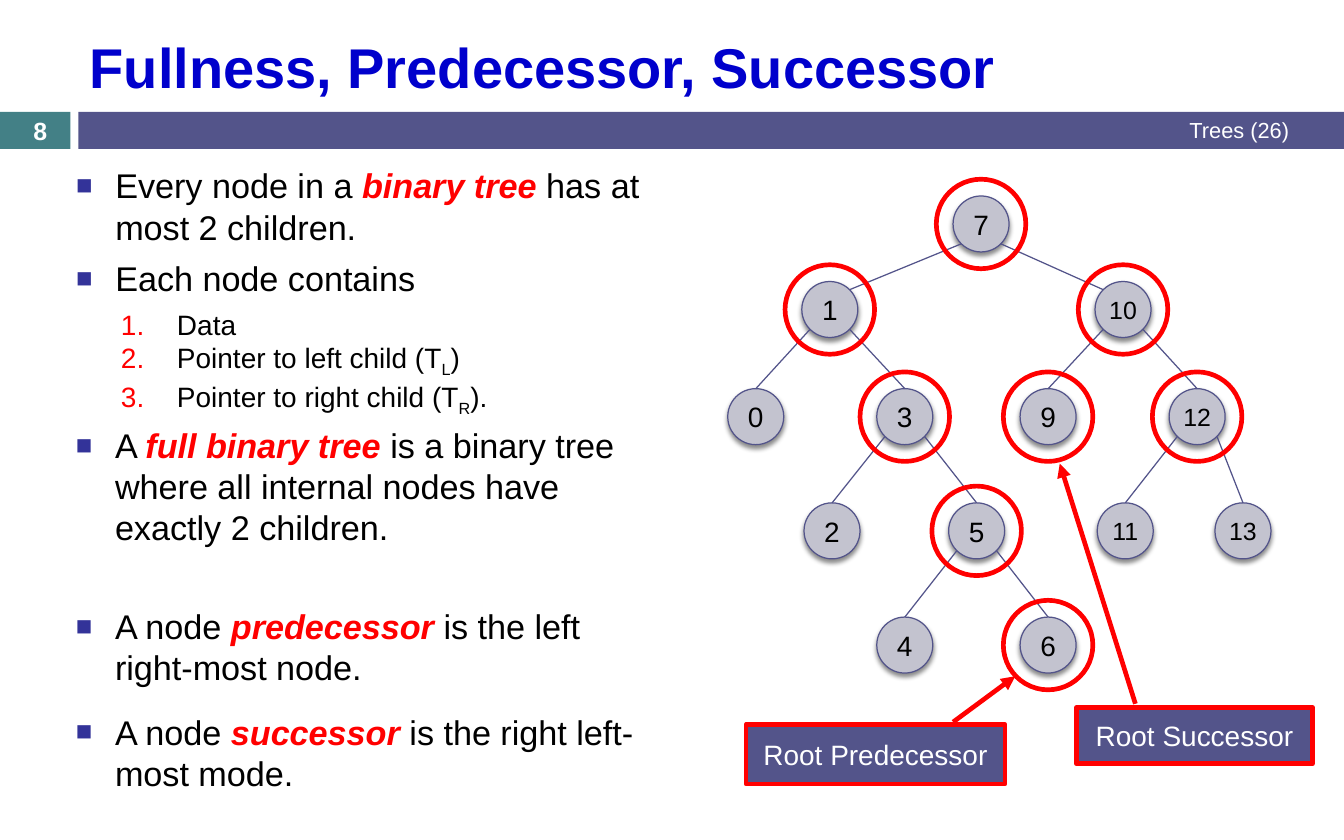
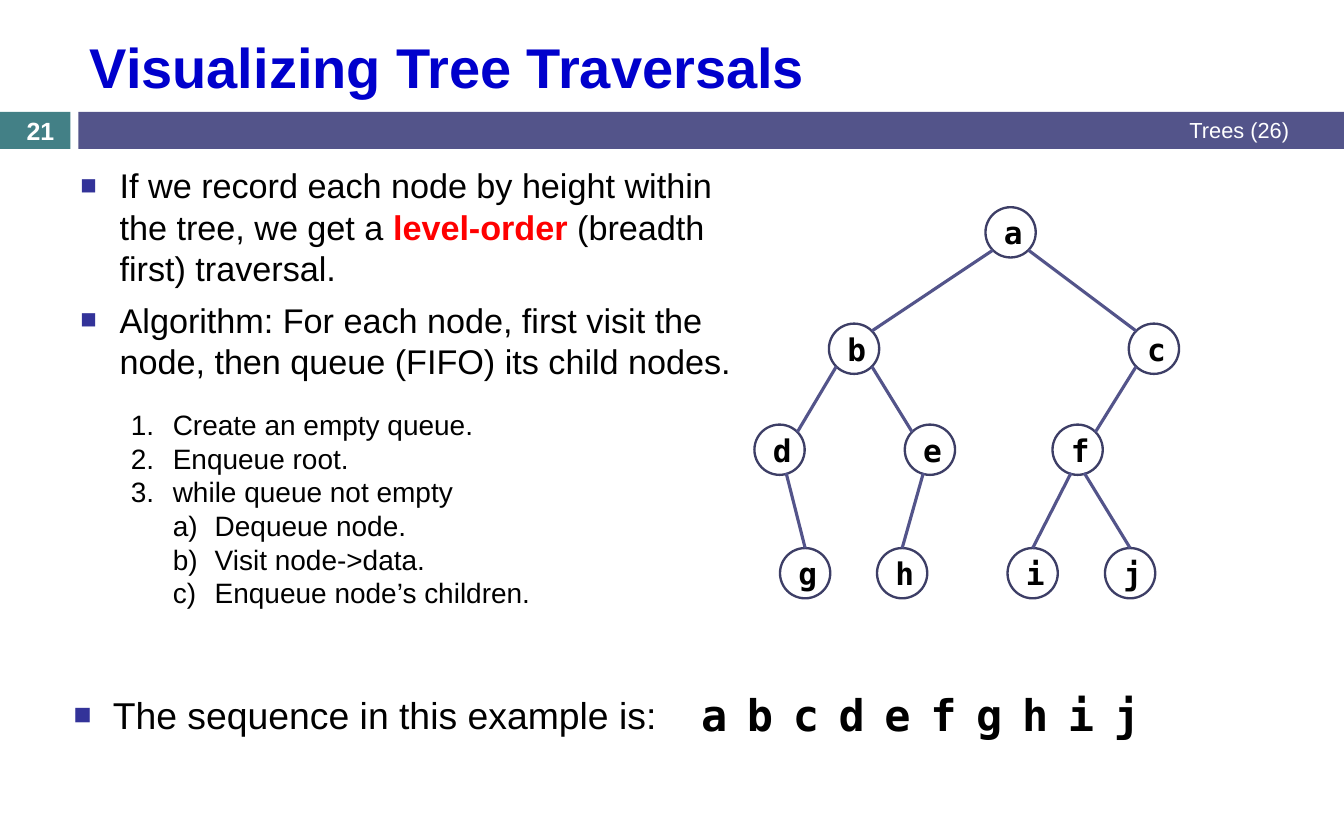
from lxml.etree import SubElement
from pptx import Presentation
from pptx.dml.color import RGBColor
from pptx.enum.shapes import MSO_CONNECTOR as Connector, MSO_SHAPE as Shape
from pptx.enum.text import MSO_ANCHOR as Anchor, MSO_AUTO_SIZE as AutoSize, PP_ALIGN as Align
from pptx.oxml.ns import qn
from pptx.util import Cm, Pt

SANS, MONO = "Arial", "DejaVu Sans Mono"
BLACK, WHITE, RED = "000000", "FFFFFF", "FF0000"
TITLE_BLUE, BULLET_BLUE = "0000CC", "333399"
PURPLE, DARK_PURPLE, TEAL, GREY = "53548A", "3D3E66", "438086", "C3C3CF"

COURSE = "Trees (26)"
CORNER, UNDERSIDE, TOP = (0.71, 0.71), (0.26, 0.92), (0, 1)  # shares of a radius

# Paragraph kinds: size, margin and hanging in cm, space before, numbering (None: square)
KINDS = {
    "point": dict(size=22, margin=0.89, hang=0.89, before=7, color=BULLET_BLUE),
    "big point": dict(size=24, margin=0.89, hang=0.89, before=7, color=BULLET_BLUE),
    "first part": dict(size=18, margin=2.29, hang=1.27, before=5.5, color=RED,
                       number="arabicPeriod", level=1),
    "part": dict(size=18, margin=2.29, hang=1.27, before=0, color=RED,
                 number="arabicPeriod", level=1),
    "step": dict(size=18, margin=0.95, hang=0.95, before=0, color=BLACK,
                 number="arabicPeriod"),
    "substep": dict(size=18, margin=1.9, hang=0.95, before=0, color=BLACK,
                    number="alphaLcParenR", level=1),
}

# Each list: box in cm, then paragraphs as a kind and its runs (text, or style and text)
FULLNESS_LISTS = [
    ((1.47, 3.61, 13.82, 5.69), [
        ("point", ["Every node in a ", ("term", "binary tree "), "has at most 2 children."]),
        ("point", ["Each node contains"]),
        ("first part", ["Data"]),
        ("part", ["Pointer to left child (T", ("sub", "L"), ")"]),
        ("part", ["Pointer to right child (T", ("sub", "R"), ")."]),
    ]),
    ((1.47, 9.5, 13.41, 4.04), [
        ("point", ["A ", ("term", "full binary tree "),
                   "is a binary tree where all internal nodes have exactly 2 children."]),
    ]),
    ((1.47, 13.61, 13.56, 2.62), [
        ("point", ["A node ", ("term", "predecessor"), " is the left right-most node."]),
    ]),
    ((1.47, 16, 13.56, 2.62), [
        ("point", ["A node ", ("term", "successor"), " is the right left-most mode."]),
    ]),
]
TRAVERSAL_LISTS = [
    ((1.57, 3.61, 15.39, 5.59), [
        ("point", ["If we record each node by height within the tree, we get a ",
                   ("strong", "level-order"), " (breadth first) traversal."]),
        ("point", ["Algorithm: For each node, first visit the node, "
                   "then queue (FIFO) its child nodes."]),
    ]),
    ((2.72, 9.12, 12.6, 4.88), [
        ("step", ["Create an empty queue."]),
        ("step", ["Enqueue root."]),
        ("step", ["while queue not empty"]),
        ("substep", ["Dequeue node."]),
        ("substep", ["Visit node->data."]),
        ("substep", ["Enqueue node’s children."]),
    ]),
    ((1.42, 15.57, 13.82, 1.9), [
        ("big point", ["The sequence in this example is:"]),
    ]),
]

# Tree rows: centre height, where edges leave the parent and reach the child,
# then nodes as label, centre and parent
NUMBER_TREE = [
    (5.08, None, None, [("7", 22.25, None)]),
    (7.02, CORNER, CORNER, [("1", 18.82, "7"), ("10", 25.47, "7")]),
    (9.45, CORNER, TOP, [("0", 17.14, "1"), ("3", 20.52, "1"),
                         ("9", 23.77, "10"), ("12", 27.15, "10")]),
    (12.04, CORNER, TOP, [("2", 18.87, "3"), ("5", 22.15, "3"),
                          ("11", 25.52, "12"), ("13", 28.19, "12")]),
    (14.63, CORNER, TOP, [("4", 20.52, "5"), ("6", 23.77, "5")]),
]
LETTER_TREE = [
    (5.27, None, None, [("a", 22.92, None)]),
    (7.91, CORNER, CORNER, [("b", 19.37, "a"), ("c", 26.17, "a")]),
    (10.2, CORNER, CORNER, [("d", 17.68, "b"), ("e", 21.09, "b"), ("f", 24.44, "c")]),
    (13, UNDERSIDE, TOP, [("g", 18.26, "d"), ("h", 20.46, "e"),
                          ("i", 23.42, "f"), ("j", 25.63, "f")]),
]
NUMBER_STYLE = dict(size=1.27, fill=GREY, line=PURPLE, width=0.79, edge_width=0.79,
                    font=SANS, bold=False, inset=0, shadow=True)
LETTER_STYLE = dict(size=1.14, fill=WHITE, line=DARK_PURPLE, width=1.5, edge_width=2,
                    font=MONO, bold=True, inset=0.25, shadow=False)

RINGED, RING_SIZE = ["1", "7", "10", "12", "3", "5", "9", "6"], 2.03
CALLOUTS = [
    ("Root Successor", (24.41, 16.05, 5.36, 1.27), (-0.07, 0.25, -4.36, -0.07)),
    ("Root Predecessor", (16.92, 16.43, 5.87, 1.35), (-0.04, 0.8, -0.81, 1.04)),
]
SEQUENCE, SEQUENCE_LEFT, SEQUENCE_PITCH = "abcdefghij", 15.65, 1.04


def rgb(color):
    return RGBColor.from_string(color)


def place(shape, box):
    shape.left, shape.top, shape.width, shape.height = map(Cm, box)


def set_font(font, size, color=BLACK, name=SANS, bold=False):
    font.size, font.name, font.bold = Pt(size), name, bold
    font.color.rgb = rgb(color)


def write(shape, text, size, align=Align.CENTER, anchor=Anchor.MIDDLE, **font):
    frame = shape.text_frame
    frame.word_wrap, frame.auto_size, frame.vertical_anchor = True, AutoSize.NONE, anchor
    para = frame.paragraphs[0]
    para.text, para.alignment = text, align
    set_font(para.font, size, **font)


def add_text(slide, box, text, size, **style):
    write(slide.shapes.add_textbox(*map(Cm, box)), text, size, **style)


def add_shape(slide, kind, box, fill=None, line=None, width=1):
    shape = slide.shapes.add_shape(kind, *map(Cm, box))
    shape.shadow.inherit = False
    if fill:
        shape.fill.solid()
        shape.fill.fore_color.rgb = rgb(fill)
    else:
        shape.fill.background()
    if line:
        shape.line.color.rgb = rgb(line)
        shape.line.width = Pt(width)
    else:
        shape.line.fill.background()
    return shape


def add_circle(slide, centre, size, **look):
    x, y = centre
    return add_shape(slide, Shape.OVAL, (x - size / 2, y - size / 2, size, size), **look)


def add_soft_shadow(shape):
    effects = shape.element.spPr.find(qn("a:effectLst"))
    shadow = SubElement(effects, qn("a:outerShdw"), blurRad="38100", dist="30000",
                        dir="5400000", rotWithShape="0")
    color = SubElement(shadow, qn("a:srgbClr"), val=BLACK)
    SubElement(color, qn("a:alpha"), val="45000")


def set_bullet(para, kind):
    props = para._p.get_or_add_pPr()
    props.set("marL", str(Cm(kind["margin"])))
    props.set("indent", str(-Cm(kind["hang"])))
    color = SubElement(props, qn("a:buClr"))
    SubElement(color, qn("a:srgbClr"), val=kind["color"])
    if "number" in kind:
        SubElement(props, qn("a:buFont"), typeface=SANS)
        SubElement(props, qn("a:buAutoNum"), type=kind["number"])
    else:
        SubElement(props, qn("a:buSzPct"), val="80000")
        SubElement(props, qn("a:buFont"), typeface=SANS)
        SubElement(props, qn("a:buChar"), char="■")


def add_run(para, part):
    style, text = ("plain", part) if isinstance(part, str) else part
    span = para.add_run()
    span.text = text
    if style in ("term", "strong"):
        span.font.bold = True
        span.font.italic = style == "term"
        span.font.color.rgb = rgb(RED)
    elif style == "sub":
        span.font._element.set("baseline", "-25000")


def fill_list(shape, box, paragraphs):
    place(shape, box)
    frame = shape.text_frame
    frame.word_wrap, frame.auto_size = True, AutoSize.NONE
    for index, (kind_name, parts) in enumerate(paragraphs):
        kind = KINDS[kind_name]
        para = frame.add_paragraph() if index else frame.paragraphs[0]
        para.level = kind.get("level", 0)
        para.space_before = Pt(kind["before"])
        set_bullet(para, kind)
        set_font(para.font, kind["size"])
        for part in parts:
            add_run(para, part)


def add_slide(deck, number, title, lists):
    """Add a slide with the shared title, bands and footers, and its lists."""
    slide = deck.slides.add_slide(deck.slide_layouts[1])
    heading, body = slide.placeholders
    add_shape(slide, Shape.RECTANGLE, (0, 2.54, 1.6, 0.84), fill=TEAL)
    add_shape(slide, Shape.RECTANGLE, (1.78, 2.54, 28.7, 0.84), fill=PURPLE)
    place(heading, (1.78, 0.48, 27.71, 2.03))
    write(heading, title, 36, align=Align.LEFT, color=TITLE_BLUE, bold=True)
    add_text(slide, (11.43, 2.51, 18.06, 0.89), COURSE, 14, align=Align.RIGHT, color=WHITE)
    add_text(slide, (0, 2.57, 1.83, 0.76), number, 16, color=WHITE, bold=True)
    for index, (box, paragraphs) in enumerate(lists):
        shape = slide.shapes.add_textbox(0, 0, 0, 0) if index else body
        fill_list(shape, box, paragraphs)
    return slide


def add_edge(slide, start, end, width):
    edge = slide.shapes.add_connector(Connector.STRAIGHT, *map(Cm, start + end))
    edge.line.color.rgb = rgb(PURPLE)
    edge.line.width = Pt(width)
    SubElement(edge.element.spPr, qn("a:effectLst"))


def add_node(slide, label, centre, style):
    node = add_circle(slide, centre, style["size"], fill=style["fill"],
                      line=style["line"], width=style["width"])
    if style["shadow"]:
        add_soft_shadow(node)
    frame = node.text_frame
    frame.margin_left = frame.margin_right = Cm(style["inset"])
    frame.margin_top = frame.margin_bottom = Cm(style["inset"] / 2)
    size = 20 if style["bold"] else 18 if len(label) == 1 else 16
    write(node, label, size, name=style["font"], bold=style["bold"])


def add_tree(slide, rows, style):
    """Draw nodes, then edges on the side facing each child; return node centres."""
    centres = {label: (x, y) for y, _, _, nodes in rows for label, x, _ in nodes}
    for label, centre in centres.items():
        add_node(slide, label, centre, style)
    radius = style["size"] / 2
    for y, leave, reach, nodes in rows[1:]:
        for _, x, parent in nodes:
            parent_x, parent_y = centres[parent]
            side = radius if x > parent_x else -radius
            start = parent_x + side * leave[0], parent_y + radius * leave[1]
            end = x - side * reach[0], y - radius * reach[1]
            add_edge(slide, start, end, style["edge_width"])
    return centres


def add_callout(slide, text, box, pointer):
    callout = add_shape(slide, Shape.LINE_CALLOUT_1, box, fill=PURPLE, line=RED, width=3)
    for index, share in enumerate(pointer):
        callout.adjustments[index] = share
    SubElement(callout.line._get_or_add_ln(), qn("a:tailEnd"), type="triangle")
    write(callout, text, 18, color=WHITE)


def main():
    deck = Presentation()
    deck.slide_width, deck.slide_height = Cm(30.48), Cm(19.05)

    slide = add_slide(deck, "8", "Fullness, Predecessor, Successor", FULLNESS_LISTS)
    centres = add_tree(slide, NUMBER_TREE, NUMBER_STYLE)
    for label in RINGED:
        add_circle(slide, centres[label], RING_SIZE, line=RED, width=3)
    for callout in CALLOUTS:
        add_callout(slide, *callout)

    slide = add_slide(deck, "21", "Visualizing Tree Traversals", TRAVERSAL_LISTS)
    add_tree(slide, LETTER_TREE, LETTER_STYLE)
    for index, letter in enumerate(SEQUENCE):
        box = (SEQUENCE_LEFT + index * SEQUENCE_PITCH, 15.47, 0.97, 1.45)
        add_text(slide, box, letter, 28, anchor=Anchor.TOP, name=MONO, bold=True)

    deck.save("out.pptx")


if __name__ == "__main__":
    main()
